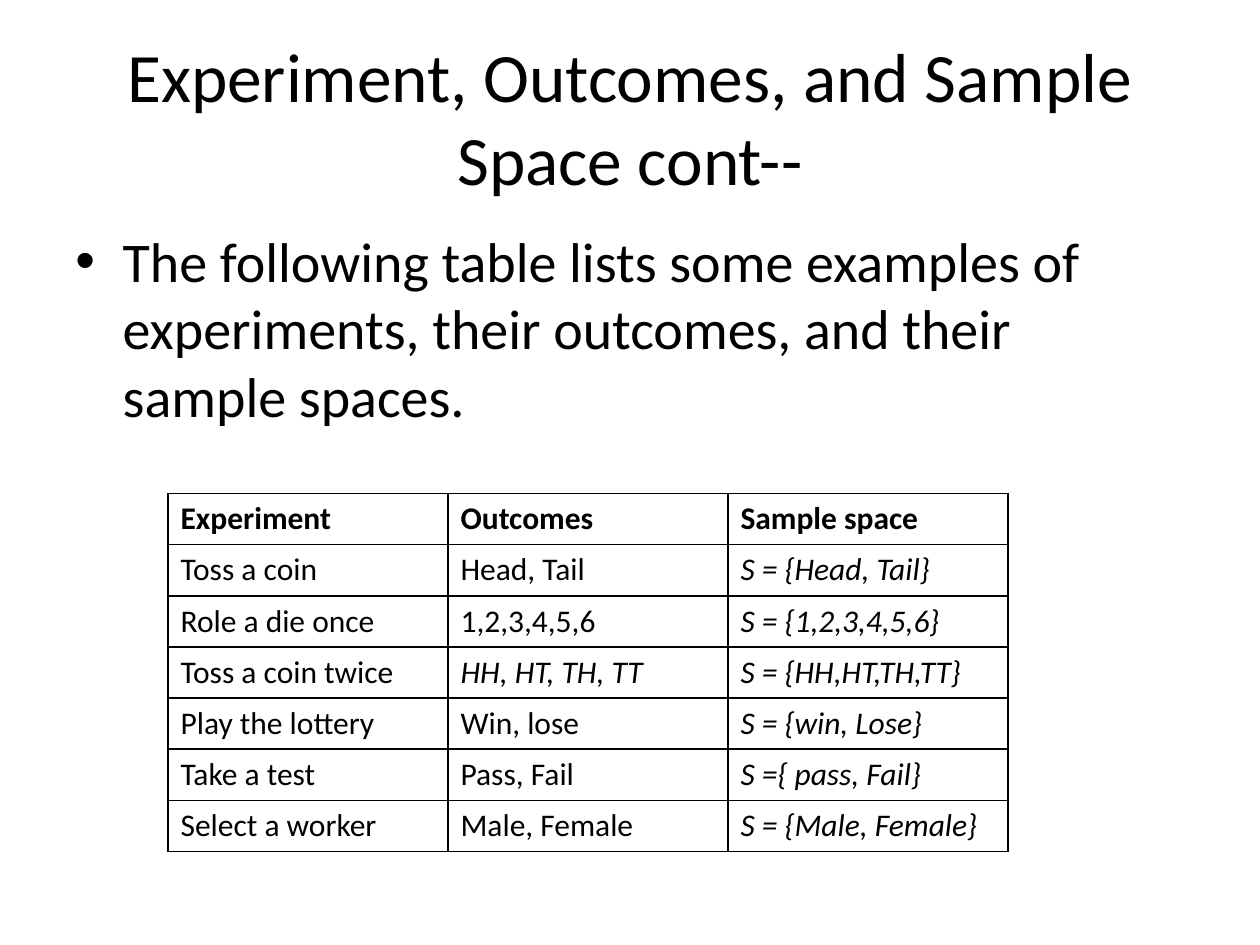
from dataclasses import dataclass

from lxml.etree import SubElement
from pptx import Presentation
from pptx.dml.color import RGBColor
from pptx.enum.text import MSO_ANCHOR, PP_ALIGN
from pptx.oxml.ns import qn
from pptx.util import Pt

BLACK = RGBColor(0, 0, 0)
FONT_NAME = "Calibri"
COLUMN_WIDTH = Pt(160)
ROW_HEIGHT = Pt(29.25)
BORDER_WIDTH = Pt(1)
BULLET_INDENT = Pt(27)


@dataclass(frozen=True)
class TextBlock:
    text: str
    top: float
    height: float
    size: float
    anchor: MSO_ANCHOR
    alignment: PP_ALIGN
    space_before: float = 0
    bullet: str = ""


@dataclass(frozen=True)
class Experiment:
    name: str
    outcomes: str
    sample_space: str
    italic_outcomes: bool = False


TEXT_BLOCKS = [
    TextBlock("Experiment, Outcomes, and Sample Space cont--",
              21.6, 90, 39.6, MSO_ANCHOR.MIDDLE, PP_ALIGN.CENTER),
    TextBlock("The following table lists some examples of experiments, "
              "their outcomes, and their sample spaces.",
              126, 356.4, 32, MSO_ANCHOR.TOP, PP_ALIGN.LEFT, 6.4, "•"),
]
HEADINGS = ("Experiment", "Outcomes", "Sample space")
EXPERIMENTS = [
    Experiment("Toss a coin", "Head, Tail", "S = {Head, Tail}"),
    Experiment("Role a die once", "1,2,3,4,5,6", "S = {1,2,3,4,5,6}"),
    Experiment("Toss a coin twice", "HH, HT, TH, TT", "S = {HH,HT,TH,TT}", True),
    Experiment("Play the lottery", "Win, lose", "S = {win, Lose}"),
    Experiment("Take a test", "Pass, Fail", "S ={ pass, Fail}"),
    Experiment("Select a worker", "Male, Female", "S = {Male, Female}"),
]


def set_attributes(target, values: dict) -> None:
    for name, value in values.items():
        setattr(target, name, value)


def write_run(paragraph, text: str, size: float, bold: bool = False,
              italic: bool = False) -> None:
    run = paragraph.add_run()
    run.text = text
    set_attributes(run.font, {"name": FONT_NAME, "size": Pt(size),
                              "bold": bold, "italic": italic})
    run.font.color.rgb = BLACK


def add_bullet(paragraph, character: str) -> None:
    properties = paragraph._p.get_or_add_pPr()
    properties.set("marL", str(BULLET_INDENT))
    properties.set("indent", str(-BULLET_INDENT))
    SubElement(properties, qn("a:buFont"), typeface="Arial")
    SubElement(properties, qn("a:buChar"), char=character)


def add_text_block(slide, block: TextBlock) -> None:
    shape = slide.shapes.add_textbox(Pt(36), Pt(block.top), Pt(648), Pt(block.height))
    set_attributes(shape.text_frame, {"word_wrap": True,
                                      "vertical_anchor": block.anchor})
    paragraph = shape.text_frame.paragraphs[0]
    set_attributes(paragraph, {"alignment": block.alignment,
                               "space_before": Pt(block.space_before)})
    if block.bullet:
        add_bullet(paragraph, block.bullet)
    write_run(paragraph, block.text, block.size)


def add_borders(cell) -> None:
    properties = cell._tc.get_or_add_tcPr()
    for side in ("a:lnL", "a:lnR", "a:lnT", "a:lnB"):
        line = SubElement(properties, qn(side), w=str(BORDER_WIDTH))
        fill = SubElement(line, qn("a:solidFill"))
        SubElement(fill, qn("a:srgbClr"), val=str(BLACK))


def write_cell(cell, text: str, bold: bool = False, italic: bool = False) -> None:
    add_borders(cell)
    cell.fill.background()
    write_run(cell.text_frame.paragraphs[0], text, 18, bold, italic)


def add_experiment_table(slide, experiments: list[Experiment]) -> None:
    row_count, column_count = len(experiments) + 1, len(HEADINGS)
    table = slide.shapes.add_table(
        row_count, column_count, Pt(96), Pt(282),
        COLUMN_WIDTH * column_count, ROW_HEIGHT * row_count).table
    set_attributes(table, {"first_row": False, "horz_banding": False})
    for column in table.columns:
        column.width = COLUMN_WIDTH
    for row in table.rows:
        row.height = ROW_HEIGHT
    for column_index, heading in enumerate(HEADINGS):
        write_cell(table.cell(0, column_index), heading, bold=True)
    for row_index, experiment in enumerate(experiments, start=1):
        write_cell(table.cell(row_index, 0), experiment.name)
        write_cell(table.cell(row_index, 1), experiment.outcomes,
                   italic=experiment.italic_outcomes)
        write_cell(table.cell(row_index, 2), experiment.sample_space, italic=True)


def main() -> None:
    presentation = Presentation()
    set_attributes(presentation, {"slide_width": Pt(720), "slide_height": Pt(540)})
    slide = presentation.slides.add_slide(presentation.slide_layouts[6])
    for block in TEXT_BLOCKS:
        add_text_block(slide, block)
    add_experiment_table(slide, EXPERIMENTS)
    presentation.save("out.pptx")


if __name__ == "__main__":
    main()
